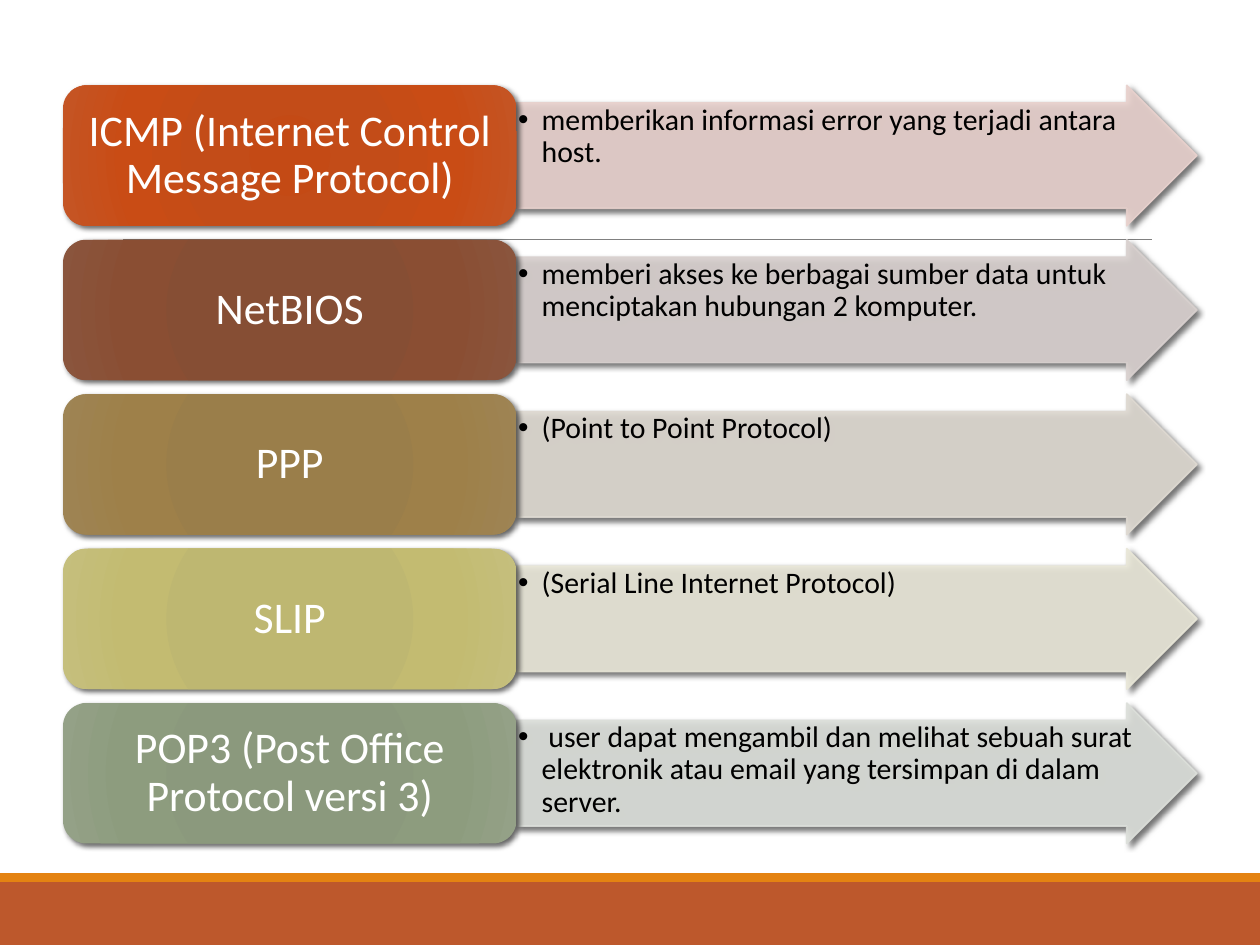
from pptx import Presentation
from pptx.dml.color import RGBColor
from pptx.enum.shapes import MSO_CONNECTOR, MSO_SHAPE
from pptx.enum.text import MSO_ANCHOR, PP_ALIGN
from pptx.oxml import parse_xml
from pptx.oxml.ns import nsdecls, qn
from pptx.util import Pt

FONT = "Calibri"
WHITE = RGBColor(0xFF, 0xFF, 0xFF)
BLACK = RGBColor(0x00, 0x00, 0x00)
GREY = RGBColor(0x80, 0x80, 0x80)
RUST = RGBColor(0xBD, 0x58, 0x2C)
ORANGE = RGBColor(0xE4, 0x83, 0x12)
ROSE = RGBColor(0xE8, 0xD1, 0xCD)
MAUVE = RGBColor(0xD9, 0xD1, 0xCF)
SAND = RGBColor(0xDE, 0xD9, 0xD1)
CREAM = RGBColor(0xE9, 0xE7, 0xD8)
MIST = RGBColor(0xDC, 0xDF, 0xDA)
ORANGE_STOPS = [RGBColor(0xC4, 0x4A, 0x15), RGBColor(0xC3, 0x4C, 0x18),
                RGBColor(0xC9, 0x4C, 0x15), RGBColor(0xC4, 0x55, 0x25)]
BROWN_STOPS = [RGBColor(0x87, 0x4C, 0x32), RGBColor(0x86, 0x4E, 0x34),
               RGBColor(0x8A, 0x4E, 0x33), RGBColor(0x8A, 0x55, 0x3D)]
OCHRE_STOPS = [RGBColor(0x9A, 0x7D, 0x48), RGBColor(0x9A, 0x7E, 0x4A),
               RGBColor(0x9E, 0x80, 0x49), RGBColor(0x9E, 0x84, 0x54)]
OLIVE_STOPS = [RGBColor(0xBE, 0xB7, 0x6E), RGBColor(0xBE, 0xB7, 0x71),
               RGBColor(0xC3, 0xBB, 0x71), RGBColor(0xC5, 0xBF, 0x7D)]
SAGE_STOPS = [RGBColor(0x8A, 0x98, 0x7B), RGBColor(0x8B, 0x99, 0x7D),
              RGBColor(0x8D, 0x9C, 0x7E), RGBColor(0x94, 0xA1, 0x87)]
STOP_POSITIONS = [0, 34, 70, 100]

PROTOCOLS = [
    ("ICMP (Internet Control Message Protocol)",
     "memberikan informasi error yang terjadi antara host.", ORANGE_STOPS, ROSE),
    ("NetBIOS",
     "memberi akses ke berbagai sumber data untuk menciptakan hubungan 2 komputer.",
     BROWN_STOPS, MAUVE),
    ("PPP", "(Point to Point Protocol)", OCHRE_STOPS, SAND),
    ("SLIP", "(Serial Line Internet Protocol)", OLIVE_STOPS, CREAM),
    ("POP3 (Post Office Protocol versi 3)",
     " user dapat mengambil dan melihat sebuah surat elektronik atau email yang "
     "tersimpan di dalam server.", SAGE_STOPS, MIST),
]


def add_plain_shape(page, kind, left, top, width, height):
    shape = page.shapes.add_shape(kind, Pt(left), Pt(top), Pt(width), Pt(height))
    shape.shadow.inherit = False
    shape.line.fill.background()
    return shape


def add_shadow(shape):
    effects = shape._element.spPr.find(qn("a:effectLst"))
    effects.append(parse_xml(
        f'<a:outerShdw {nsdecls("a")} blurRad="{Pt(3)}" dist="{Pt(2)}" '
        'dir="2700000" algn="ctr" rotWithShape="0"><a:srgbClr val="000000">'
        '<a:alpha val="60000"/></a:srgbClr></a:outerShdw>'))


def fill_radial(shape, colors):
    stops = "".join(
        f'<a:gs pos="{position * 1000}"><a:srgbClr val="{color}"/></a:gs>'
        for position, color in zip(STOP_POSITIONS, colors))
    shape.fill.gradient()
    properties = shape._element.spPr
    properties.replace(properties.find(qn("a:gradFill")), parse_xml(
        f'<a:gradFill {nsdecls("a")} rotWithShape="1"><a:gsLst>{stops}</a:gsLst>'
        '<a:path path="circle"><a:fillToRect l="100000" t="100000" '
        'r="100000" b="100000"/></a:path></a:gradFill>'))


def write_text(shape, text, size, color, align, anchor, insets):
    frame = shape.text_frame
    frame.word_wrap = True
    frame.vertical_anchor = anchor
    frame.margin_left = frame.margin_right = Pt(insets[0])
    frame.margin_top = frame.margin_bottom = Pt(insets[1])
    para = frame.paragraphs[0]
    para.text = text
    para.alignment = align
    para.line_spacing = 0.9
    font = para.runs[0].font
    font.name, font.size = FONT, Pt(size)
    font.color.rgb = color
    return para


def add_label(page, left, top, width, height, text, colors):
    label = add_plain_shape(page, MSO_SHAPE.ROUNDED_RECTANGLE, left, top, width, height)
    fill_radial(label, colors)
    add_shadow(label)
    write_text(label, text, 25, WHITE, PP_ALIGN.CENTER, MSO_ANCHOR.MIDDLE, (7.2, 3.6))


def add_arrow(page, left, top, width, height, text, color):
    arrow = add_plain_shape(page, MSO_SHAPE.RIGHT_ARROW, left, top, width, height)
    arrow.adjustments[0], arrow.adjustments[1] = 0.75, 0.5
    arrow.fill.solid()
    arrow.fill.fore_color.rgb = color
    arrow.line.color.rgb = color
    arrow.line.width = Pt(1)
    for tint in arrow._element.spPr.iter(qn("a:srgbClr")):
        tint.append(parse_xml(f'<a:alpha {nsdecls("a")} val="90000"/>'))
    add_shadow(arrow)
    para = write_text(arrow, text, 17, BLACK, PP_ALIGN.LEFT, MSO_ANCHOR.TOP, (0.85, 0.85))
    properties = para._p.get_or_add_pPr()
    properties.set("marL", str(Pt(13.5)))
    properties.set("indent", str(Pt(-13.5)))
    properties.append(parse_xml(f'<a:buFont {nsdecls("a")} typeface="Arial"/>'))
    properties.append(parse_xml(f'<a:buChar {nsdecls("a")} char="•"/>'))


def add_protocols(page, left, top, width, height):
    label_width = width * 0.4
    row_height = height / (len(PROTOCOLS) * 1.1 - 0.1)
    for index, (name, detail, stops, tint) in enumerate(PROTOCOLS):
        row_top = top + index * row_height * 1.1
        add_arrow(page, left + label_width, row_top, width - label_width, row_height,
                  detail, tint)
        add_label(page, left, row_top, label_width, row_height, name, stops)


def add_footer(page, left, top, width, height):
    stripe = 5
    for offset, depth, color in ((stripe, height - stripe, RUST), (0, stripe, ORANGE)):
        band = add_plain_shape(page, MSO_SHAPE.RECTANGLE, left, top + offset, width, depth)
        band.fill.solid()
        band.fill.fore_color.rgb = color


def add_rule(page, left, top, width):
    rule = page.shapes.add_connector(
        MSO_CONNECTOR.STRAIGHT, Pt(left), Pt(top), Pt(left + width), Pt(top))
    rule.line.color.rgb = GREY
    rule.line.width = Pt(0.5)
    rule._element.spPr.append(parse_xml(f'<a:effectLst {nsdecls("a")}/>'))


def main():
    deck = Presentation()
    deck.slide_width, deck.slide_height = Pt(720), Pt(540)
    page = deck.slides.add_slide(deck.slide_layouts[6])
    add_footer(page, 0, 499, 720, 41)
    add_rule(page, 70.5, 136.8, 588)
    add_protocols(page, 36, 48.8, 648, 433.2)
    deck.save("out.pptx")


if __name__ == "__main__":
    main()
